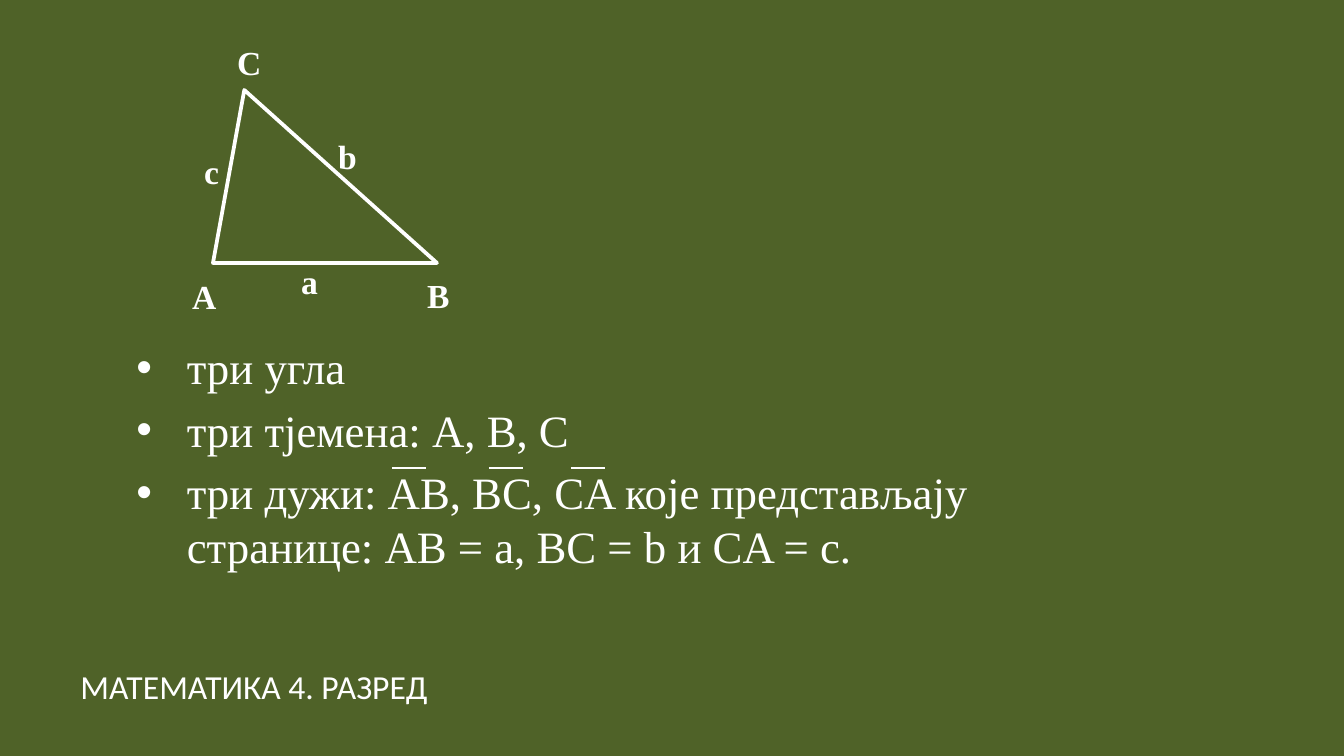
from lxml import etree
from pptx import Presentation
from pptx.dml.color import RGBColor
from pptx.enum.shapes import MSO_CONNECTOR, MSO_SHAPE
from pptx.enum.text import MSO_ANCHOR, MSO_AUTO_SIZE, PP_ALIGN
from pptx.oxml.ns import qn
from pptx.util import Pt

STRAIGHT = MSO_CONNECTOR.STRAIGHT
TRIANGLE = MSO_SHAPE.ISOSCELES_TRIANGLE
TOP = MSO_ANCHOR.TOP
LEFT = PP_ALIGN.LEFT
FIXED = MSO_AUTO_SIZE.NONE

COLORS = {"background": "4F6228", "chalk": "FFFFFF"}
SERIF, SANS = "Times New Roman", "Calibri"

COURSE = "МАТЕМАТИКА 4. РАЗРЕД"
FACTS = [
    "три угла",
    "три тјемена: A, B, C",
    "три дужи: AB, BC, CA које представљају странице: АB = a, BC = b и CA = c.",
]
TRIANGLE_LABELS = [
    ("A", 179, 269),
    ("B", 414, 268),
    ("C", 224, 35),
    ("а", 288, 254),
    ("b", 325, 129),
    ("c", 191, 144),
]
LABEL_SIZE = (45, 54)
OVERBAR_STARTS = [392, 489, 571]
OVERBAR_Y, OVERBAR_LENGTH = 468, 34
TRIANGLE_BOX = (213, 90, 224, 173)
APEX = 0.14
FACTS_BOX = (123, 333, 1053, 317)
COURSE_BOX = (67, 659, 594, 56)

EMU_PER_PX = 914400 / 134.4


def px(*lengths):
    return [round(length * EMU_PER_PX) for length in lengths]


def color(name):
    return RGBColor.from_string(COLORS[name])


def place(shape, box):
    shape.left, shape.top, shape.width, shape.height = px(*box)


def write(shape, lines, size, font, bold=False):
    frame = shape.text_frame
    frame.word_wrap = True
    frame.auto_size = FIXED
    frame.vertical_anchor = TOP
    for index, line in enumerate(lines):
        paragraph = frame.add_paragraph() if index else frame.paragraphs[0]
        paragraph.alignment = LEFT
        run = paragraph.add_run()
        run.text = line
        run.font.size = Pt(size)
        run.font.name = font
        run.font.bold = bold
        run.font.color.rgb = color("chalk")
    for paragraph in frame.paragraphs:
        paragraph.font.color.rgb = color("chalk")


def draw_line(shape, width):
    shape.line.color.rgb = color("chalk")
    shape.line.width = Pt(width)


prs = Presentation()
prs.slide_width, prs.slide_height = px(1344, 756)
slide = prs.slides.add_slide(prs.slide_layouts[1])
slide.background.fill.solid()
slide.background.fill.fore_color.rgb = color("background")

course, facts = slide.placeholders
place(course, COURSE_BOX)
write(course, [COURSE], 18, SANS)
place(facts, FACTS_BOX)
write(facts, FACTS, 24, SERIF)

for start in OVERBAR_STARTS:
    overbar = slide.shapes.add_connector(
        STRAIGHT, *px(start, OVERBAR_Y, start + OVERBAR_LENGTH, OVERBAR_Y)
    )
    draw_line(overbar, 0.75)
    etree.SubElement(overbar._element.spPr, qn("a:effectLst"))

triangle = slide.shapes.add_shape(TRIANGLE, *px(*TRIANGLE_BOX))
triangle.adjustments[0] = APEX
triangle.fill.background()
triangle.shadow.inherit = False
draw_line(triangle, 2)

for name, left, top in TRIANGLE_LABELS:
    label = slide.shapes.add_textbox(*px(left, top, *LABEL_SIZE))
    write(label, [name], 18, SERIF, bold=True)

prs.save("out.pptx")
